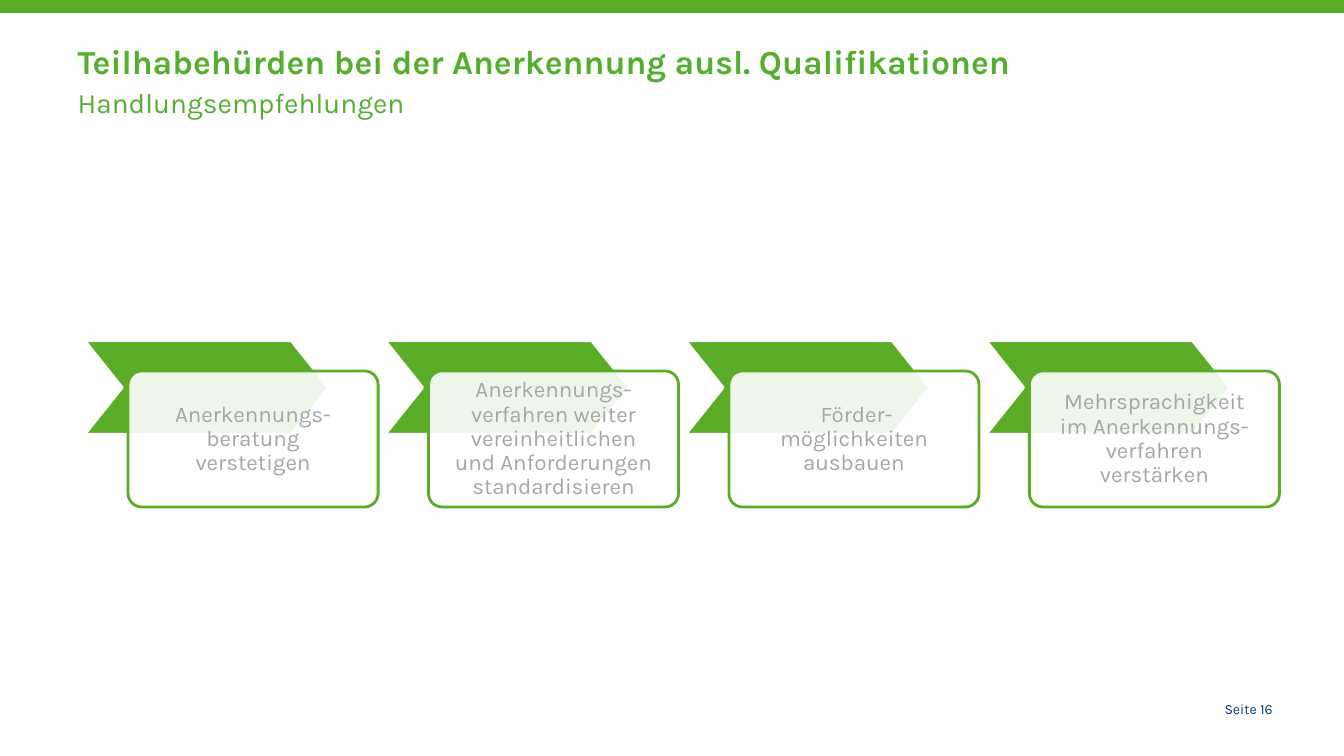
from lxml.etree import SubElement
from pptx import Presentation
from pptx.dml.color import RGBColor
from pptx.enum.shapes import MSO_SHAPE
from pptx.enum.text import MSO_ANCHOR, PP_ALIGN
from pptx.oxml.ns import qn
from pptx.util import Inches, Pt

# Content
TITLE = "Teilhabehürden bei der Anerkennung ausl. Qualifikationen"
SUBTITLE = "Handlungsempfehlungen"
PAGE = "Seite 16"
STEPS = [
    "Anerkennungs-beratung verstetigen",
    "Anerkennungs-verfahren weiter vereinheitlichen und Anforderungen standardisieren",
    " Förder- möglichkeiten ausbauen",
    "Mehrsprachigkeit im Anerkennungs-verfahren verstärken",
]

# Style
FONT = "Karla"
GREEN, TITLE_GREEN, GREY, BLUE, WHITE = "5BAC26", "54AF2E", "A6A6A6", "003C76", "FFFFFF"

# Grid in inches: one column per step
WIDTH, HEIGHT = 13.33, 7.5
LEFT, TOP, PITCH = 0.84, 3.38, 2.98
CHEVRON_W, CHEVRON_H = 2.42, 0.93
CARD_W, CARD_H = 2.48, 1.35
CARD_DX, CARD_DY = 0.43, 0.3
CARD_INSET = 0.16


def rgb(color):
    return RGBColor.from_string(color)


def add_run(p, text, size, color, bold=False):
    r = p.add_run()
    r.text = text
    r.font.name, r.font.size, r.font.bold = FONT, Pt(size), bold
    r.font.color.rgb = rgb(color)


def add_box(s, kind, x, y, w, h, fill, line=None, adj=None):
    sp = s.shapes.add_shape(kind, Inches(x), Inches(y), Inches(w), Inches(h))
    sp.shadow.inherit = False
    sp.fill.solid()
    sp.fill.fore_color.rgb = rgb(fill)
    if line:
        sp.line.color.rgb = rgb(line)
        sp.line.width = Pt(2)
    else:
        sp.line.fill.background()
    if adj is not None:
        sp.adjustments[0] = adj
    return sp


def set_opacity(sp, percent):
    color = sp.fill._xPr.find(qn("a:solidFill"))[0]
    SubElement(color, qn("a:alpha")).set("val", str(percent * 1000))


def add_step(s, x, text):
    add_box(s, MSO_SHAPE.CHEVRON, x, TOP, CHEVRON_W, CHEVRON_H, GREEN, WHITE, 0.4)
    card = add_box(s, MSO_SHAPE.ROUNDED_RECTANGLE, x + CARD_DX, TOP + CARD_DY,
                   CARD_W, CARD_H, WHITE, GREEN, 0.1)
    set_opacity(card, 90)
    tf = card.text_frame
    tf.word_wrap = True
    tf.vertical_anchor = MSO_ANCHOR.MIDDLE
    tf.margin_left = tf.margin_right = Inches(CARD_INSET)
    tf.margin_top = tf.margin_bottom = Inches(CARD_INSET)
    p = tf.paragraphs[0]
    p.alignment, p.line_spacing = PP_ALIGN.CENTER, 0.9
    add_run(p, text, 16, GREY)


def main():
    prs = Presentation()
    prs.slide_width, prs.slide_height = Inches(WIDTH), Inches(HEIGHT)
    s = prs.slides.add_slide(prs.slide_layouts[5])

    # Top bar
    add_box(s, MSO_SHAPE.RECTANGLE, 0, -0.03, WIDTH, 0.16, GREEN)

    # Title and subtitle
    title = s.shapes.title
    title.left, title.top = Inches(0.67), Inches(0.3)
    title.width, title.height = Inches(12), Inches(1.25)
    tf = title.text_frame
    tf.word_wrap = True
    tf.vertical_anchor = MSO_ANCHOR.TOP
    p = tf.paragraphs[0]
    p.alignment, p.line_spacing = PP_ALIGN.LEFT, 1.14
    add_run(p, TITLE, 24, TITLE_GREEN, bold=True)
    p.add_line_break()
    add_run(p, SUBTITLE, 20, TITLE_GREEN)

    # Steps
    for i, text in enumerate(STEPS):
        add_step(s, LEFT + i * PITCH, text)

    # Page number
    tf = s.shapes.add_textbox(Inches(11.34), Inches(6.9), Inches(1.38), Inches(0.27)).text_frame
    tf.word_wrap = True
    p = tf.paragraphs[0]
    p.alignment = PP_ALIGN.RIGHT
    add_run(p, PAGE, 10, BLUE)

    prs.save("out.pptx")


if __name__ == "__main__":
    main()
